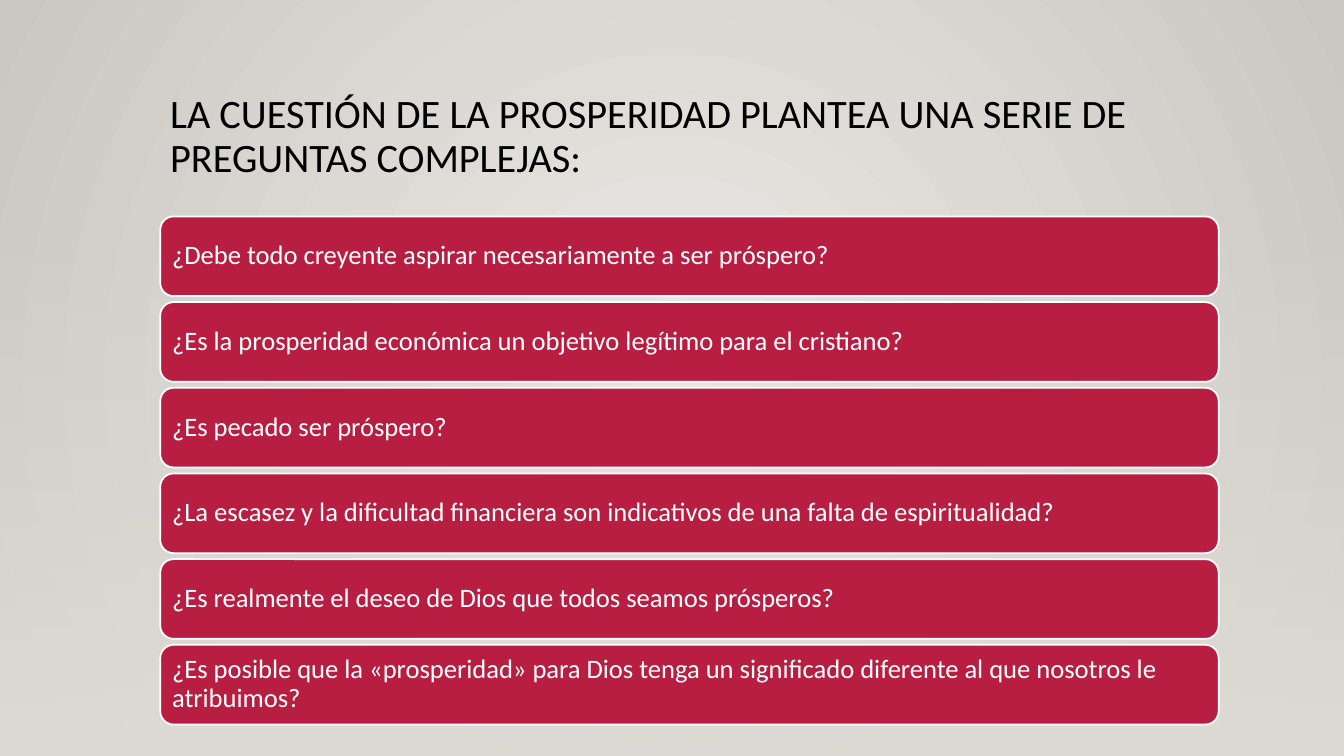
from dataclasses import dataclass

from lxml import etree
from pptx import Presentation
from pptx.dml.color import RGBColor
from pptx.enum.shapes import MSO_SHAPE as Shape
from pptx.enum.text import MSO_ANCHOR as Anchor, PP_ALIGN as Align
from pptx.oxml import parse_xml
from pptx.oxml.ns import nsdecls, qn
from pptx.util import Pt


@dataclass(frozen=True)
class Theme:
    font: str = "Calibri"
    title_size: float = 28.8
    question_size: float = 19
    line_spacing: float = 0.9
    ink: str = "000000"
    light: str = "FFFFFF"
    card: str = "B71E42"
    center: str = "ECEAE7"
    edge: str = "CAC7C1"
    veil: str = "DFDBD5"


@dataclass(frozen=True)
class Box:
    left: float
    top: float
    width: float
    height: float

    def place(self):
        return Pt(self.left), Pt(self.top), Pt(self.width), Pt(self.height)


THEME = Theme()
PAGE = Box(0, 0, 960, 540)
VEIL = Box(0, 159, 960, 381)
TITLE = Box(114.5, 63.4, 756, 82.8)
LIST = Box(114.5, 154.6, 756, 362.9)
GAP = 4.3

HEADING = "LA CUESTIÓN DE LA PROSPERIDAD PLANTEA UNA SERIE DE PREGUNTAS COMPLEJAS:"
QUESTIONS = [
    "¿Debe todo creyente aspirar necesariamente a ser próspero?",
    "¿Es la prosperidad económica un objetivo legítimo para el cristiano?",
    "¿Es pecado ser próspero?",
    "¿La escasez y la dificultad financiera son indicativos de una falta de espiritualidad?",
    "¿Es realmente el deseo de Dios que todos seamos prósperos?",
    "¿Es posible que la «prosperidad» para Dios tenga un significado diferente "
    "al que nosotros le atribuimos?",
]


def set_gradient(fill, start, end):
    """Give a fill two colours and return its gradient stops."""
    fill.gradient()
    for stop, color in zip(fill.gradient_stops, (start, end)):
        stop.color.rgb = RGBColor.from_string(color)
        stop.position = 0 if color == start else 1
    return fill.gradient_stops


def write(frame, text, size, color):
    frame.word_wrap = True
    para = frame.paragraphs[0]
    para.text = text
    para.alignment = Align.LEFT
    para.line_spacing = THEME.line_spacing
    para.font.name = THEME.font
    para.font.size = Pt(size)
    para.font.color.rgb = RGBColor.from_string(color)


def add_backdrop(page, box):
    # Radial background
    set_gradient(page.background.fill, THEME.center, THEME.edge)
    gradient = page.background._cSld.find(".//" + qn("a:gradFill"))
    gradient.replace(gradient.find(qn("a:lin")), parse_xml(
        f'<a:path {nsdecls("a")} path="circle">'
        '<a:fillToRect l="50000" t="50000" r="50000" b="50000"/></a:path>'))

    # Veil that turns opaque towards the bottom
    veil = page.shapes.add_shape(Shape.RECTANGLE, *box.place())
    veil.shadow.inherit = False
    veil.line.fill.background()
    set_gradient(veil.fill, THEME.veil, THEME.veil)
    veil.fill.gradient_angle = 270
    stops = veil.fill._xPr.findall(".//" + qn("a:gs"))
    stops[1].set("pos", "100000")
    etree.SubElement(stops[0][0], qn("a:alpha"), val="0")


def add_title(page, box):
    title = page.shapes.add_textbox(*box.place())
    write(title.text_frame, HEADING, THEME.title_size, THEME.ink)


def add_questions(page, box):
    height = (box.height + GAP) / len(QUESTIONS) - GAP
    for index, question in enumerate(QUESTIONS):
        place = Box(box.left, box.top + index * (height + GAP), box.width, height)
        card = page.shapes.add_shape(Shape.ROUNDED_RECTANGLE, *place.place())
        card.shadow.inherit = False
        card.fill.solid()
        card.fill.fore_color.rgb = RGBColor.from_string(THEME.card)
        card.line.color.rgb = RGBColor.from_string(THEME.light)
        card.line.width = Pt(1.25)
        frame = card.text_frame
        frame.vertical_anchor = Anchor.MIDDLE
        frame.margin_left = frame.margin_right = Pt(5.7)
        frame.margin_top = frame.margin_bottom = Pt(5.7)
        write(frame, question, THEME.question_size, THEME.light)


def main():
    deck = Presentation()
    deck.slide_width, deck.slide_height = Pt(PAGE.width), Pt(PAGE.height)
    page = deck.slides.add_slide(deck.slide_layouts[6])
    add_backdrop(page, VEIL)
    add_title(page, TITLE)
    add_questions(page, LIST)
    deck.save("out.pptx")


if __name__ == "__main__":
    main()
